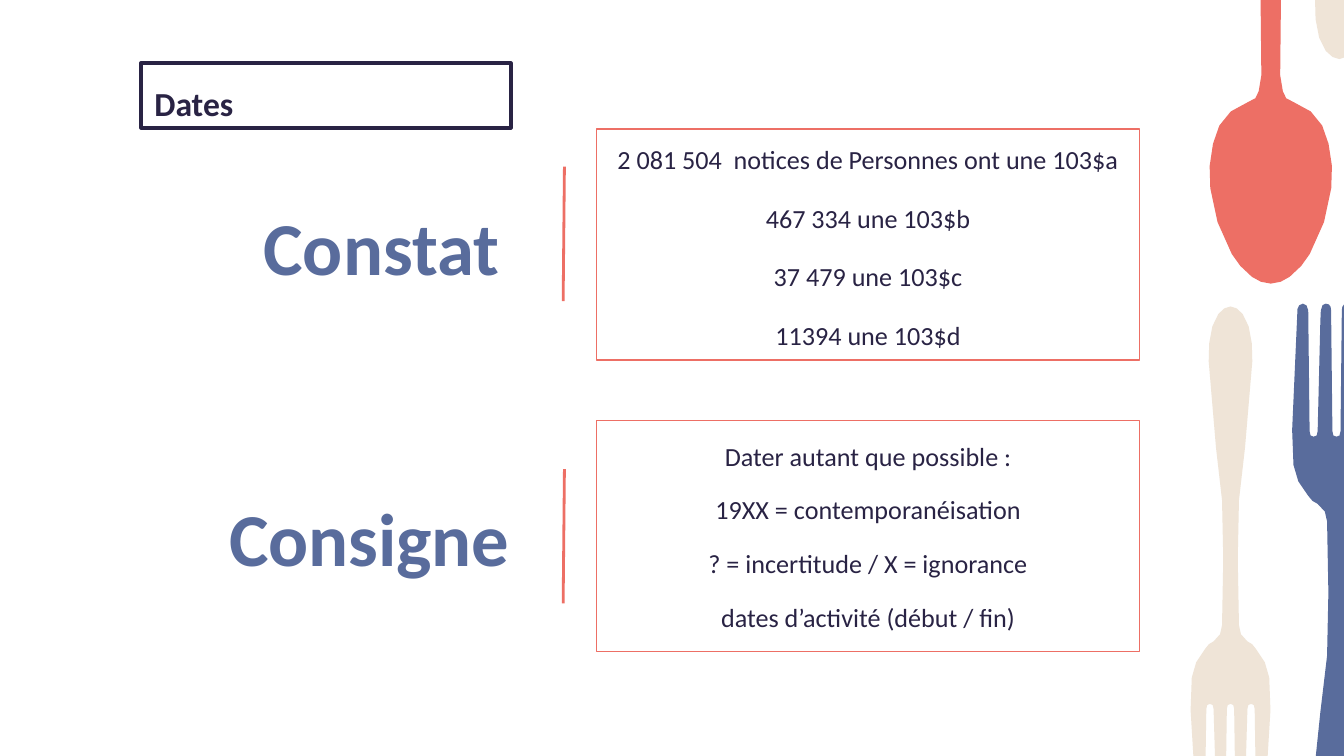
from dataclasses import dataclass
from itertools import pairwise
from math import dist, sqrt

from lxml import etree
from pptx import Presentation
from pptx.dml.color import RGBColor
from pptx.enum import shapes as kinds, text as t
from pptx.oxml import ns
from pptx.util import Pt

CORAL = RGBColor(0xED, 0x6F, 0x65)
SAND = RGBColor(0xEF, 0xE4, 0xD7)
BLUE = RGBColor(0x59, 0x6C, 0x9C)
NAVY = RGBColor(0x29, 0x23, 0x44)
WHITE = RGBColor(0xFF, 0xFF, 0xFF)
FONT = "Calibri"
UNIT = 0.72
LOWEST = 423.36

Point = tuple[float, float]

FORK_HALF = [
    (0, 99), (-2, 99), (-3, 98), (-3, 95),
    (-3, 65), (-4, 35), (-4, 5), (-4, 2), (-5, 0), (-8, 0),
    (-11, 0), (-12, 3), (-12, 13),
    (-12, 40), (-13, 68), (-14, 95), (-14, 98), (-15, 99), (-17, 99),
    (-19, 99), (-20, 98), (-20, 95), (-20, 65), (-21, 35), (-21, 5),
    (-21, 2), (-23, 0), (-25, 0), (-27, 0), (-29, 2), (-29, 4),
    (-30, 34), (-32, 64), (-33, 94),
    (-33, 102), (-33, 111), (-32, 120), (-31, 128), (-27, 137), (-21, 143),
    (-19, 146), (-17, 148), (-14, 149), (-9, 152), (-7, 157), (-7, 162),
    (-6, 180), (-6, 197), (-6, 215),
    (-6, 231), (-6, 247), (-7, 262), (-8, 276), (-10, 290), (-12, 304),
    (-16, 327), (-18, 350), (-18, 373), (-18, 383), (-18, 392), (-15, 401),
    (-14, 405), (-12, 408), (-10, 411), (-7, 415), (-3, 417), (0, 417),
]
SPOON_HALF = [
    (0, 0), (4, 0), (8, 2), (11, 5),
    (15, 10), (17, 16), (18, 21), (18, 30), (19, 39), (19, 48),
    (19, 62), (18, 77), (17, 91), (16, 107), (13, 124), (12, 140),
    (10, 155), (8, 170), (8, 185), (7, 217), (7, 250), (7, 282),
    (7, 286), (8, 290), (9, 294), (10, 298), (12, 301), (17, 302),
    (32, 307), (40, 318), (43, 333), (46, 344), (46, 355), (45, 366),
    (43, 383), (38, 400), (29, 415), (25, 421), (21, 427), (14, 432),
    (10, 435), (5, 437), (0, 437),
]


@dataclass(frozen=True)
class Cutlery:
    half: list[Point]
    center: float
    origin: float
    color: RGBColor
    x_scale: float = 1
    y_scale: float = 1


@dataclass(frozen=True)
class Label:
    box: tuple[float, float, float, float]
    lines: tuple[str, ...]
    size: float
    color: RGBColor
    bold: bool = False
    align: t.PP_ALIGN = t.PP_ALIGN.RIGHT
    anchor: t.MSO_ANCHOR = t.MSO_ANCHOR.MIDDLE
    spacing: float = 1
    before: float = 0
    after: float = 0
    border: RGBColor | None = None
    border_width: float = 0.75
    fill: RGBColor | None = None


def trace(half: list[Point]) -> list[Point]:
    points = [half[0]]
    for i in range(0, len(half) - 1, 3):
        curve = half[i:i + 4]
        bend = sum(dist(p, q) for p, q in pairwise(curve)) - dist(curve[0], curve[3])
        steps = 1 + round(1.2 * sqrt(max(bend, 0)))
        for step in range(1, steps + 1):
            k = step / steps
            weights = ((1 - k) ** 3, 3 * k * (1 - k) ** 2, 3 * k * k * (1 - k), k ** 3)
            points.append(tuple(
                sum(w * p[axis] for w, p in zip(weights, curve)) for axis in (0, 1)
            ))
    return points + [(-x, y) for x, y in reversed(points[1:-1])]


def draw_cutlery(slide, piece: Cutlery) -> None:
    outline = [
        (Pt(piece.center + x * UNIT * piece.x_scale),
         Pt(min(piece.origin + y * UNIT * piece.y_scale, LOWEST)))
        for x, y in trace(piece.half)
    ]
    builder = slide.shapes.build_freeform(*outline[0])
    builder.add_line_segments(outline[1:], close=True)
    silhouette = builder.convert_to_shape()
    silhouette.shadow.inherit = False
    silhouette.fill.solid()
    silhouette.fill.fore_color.rgb = piece.color
    silhouette.line.fill.background()


def draw_label(slide, label: Label) -> None:
    box = [Pt(length) for length in label.box]
    if label.border is None:
        panel = slide.shapes.add_textbox(*box)
    else:
        panel = slide.shapes.add_shape(kinds.MSO_SHAPE.RECTANGLE, *box)
        panel.shadow.inherit = False
        panel.line.color.rgb = label.border
        panel.line.width = Pt(label.border_width)
        if label.fill is None:
            panel.fill.background()
        else:
            panel.fill.solid()
            panel.fill.fore_color.rgb = label.fill
    frame = panel.text_frame
    frame.word_wrap = True
    frame.vertical_anchor = label.anchor
    frame.margin_left = frame.margin_right = Pt(7.2)
    frame.margin_top = frame.margin_bottom = Pt(7.2)
    for i, line in enumerate(label.lines):
        paragraph = frame.add_paragraph() if i else frame.paragraphs[0]
        paragraph.text = line
        paragraph.alignment = label.align
        paragraph.line_spacing = label.spacing
        paragraph.space_before = Pt(label.before)
        paragraph.space_after = Pt(label.after)
        paragraph.font.name = FONT
        paragraph.font.size = Pt(label.size)
        paragraph.font.bold = label.bold
        paragraph.font.color.rgb = label.color


def draw_divider(slide, top: float) -> None:
    divider = slide.shapes.add_connector(
        kinds.MSO_CONNECTOR.STRAIGHT, Pt(301.7), Pt(top + 72), Pt(302.4), Pt(top))
    divider.line.color.rgb = CORAL
    divider.line.width = Pt(1.5)
    etree.SubElement(divider._element.spPr, ns.qn("a:effectLst"))


def detail(top: float, spacing: float, *lines: str) -> Label:
    return Label((319.7, top, 290.9, 123.8), lines, 14, NAVY, align=t.PP_ALIGN.CENTER,
                 spacing=spacing, before=6, after=6, border=CORAL)


CUTLERY = [
    Cutlery(SPOON_HALF, 680.8, -162.7, CORAL),
    Cutlery(FORK_HALF, 717.5, -268.6, SAND),
    Cutlery(FORK_HALF, 659.2, 443.4, SAND, 0.9, -0.93),
    Cutlery(FORK_HALF, 716, 162.7, BLUE),
]
LABELS = [
    Label((74.2, 265, 205.9, 44.6), ("Consigne",), 40, BLUE, bold=True),
    detail(225.4, 1, "Dater autant que possible :", "19XX = contemporanéisation",
           "? = incertitude / X = ignorance", "dates d’activité (début / fin)"),
    detail(69.1, 1.15, "2 081 504  notices de Personnes ont une 103$a",
           "467 334 une 103$b", "37 479 une 103$c", "11394 une 103$d"),
    Label((74.2, 104.4, 200.2, 54), ("Constat",), 40, BLUE, bold=True),
    Label((75.6, 33.8, 198, 34.6), ("Dates",), 18, NAVY, bold=True,
          align=t.PP_ALIGN.LEFT, anchor=t.MSO_ANCHOR.TOP, spacing=1.15, after=16,
          border=NAVY, border_width=2, fill=WHITE),
]


def main() -> None:
    deck = Presentation()
    deck.slide_width, deck.slide_height = Pt(720), Pt(405)
    slide = deck.slides.add_slide(deck.slide_layouts[6])
    for piece in CUTLERY:
        draw_cutlery(slide, piece)
    for label in LABELS:
        draw_label(slide, label)
    for top in (89.3, 251.3):
        draw_divider(slide, top)
    deck.save("out.pptx")


if __name__ == "__main__":
    main()
